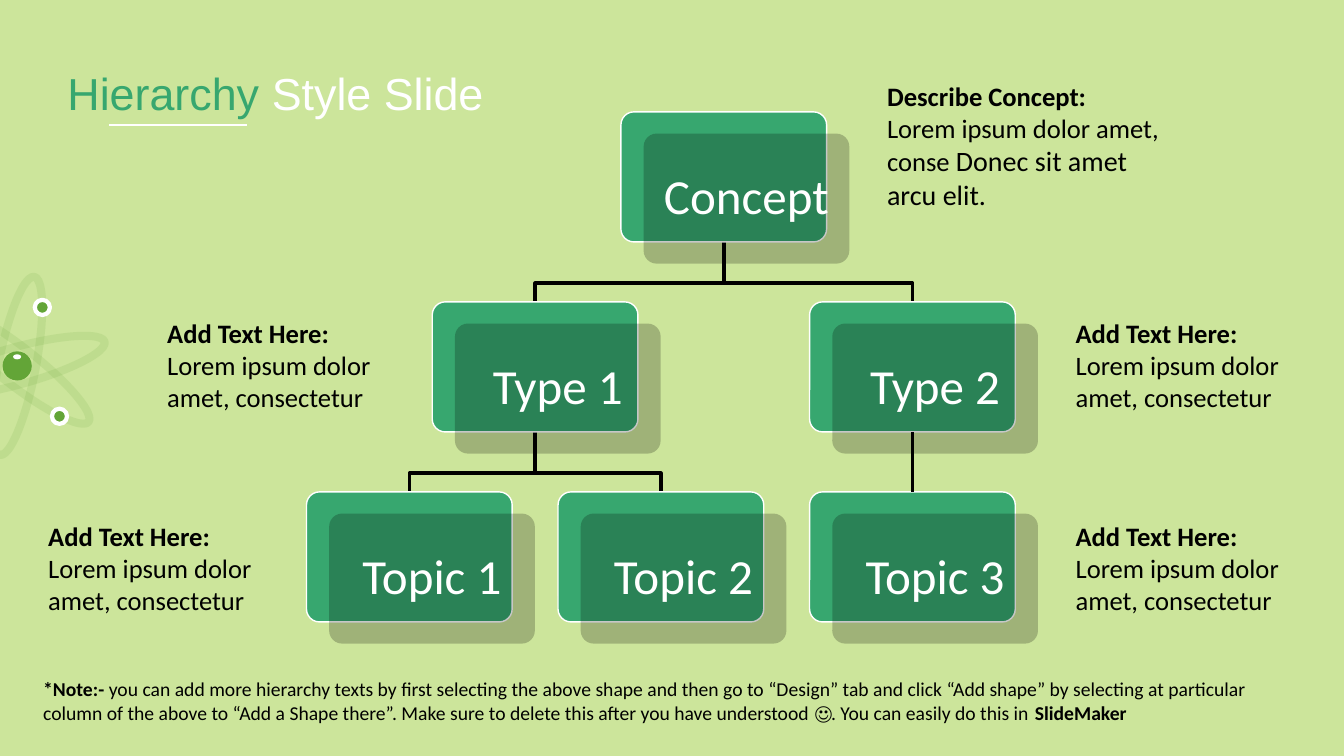
"""Build a hierarchy slide with a three-level tree, captions and an atom ornament."""
from lxml.etree import SubElement
from pptx import Presentation
from pptx.dml.color import RGBColor
from pptx.enum.shapes import MSO_CONNECTOR, MSO_SHAPE
from pptx.enum.text import MSO_ANCHOR, PP_ALIGN
from pptx.oxml.ns import qn
from pptx.util import Inches, Pt

BACKGROUND = RGBColor(0xCC, 0xE5, 0x9B)
GREEN = RGBColor(0x37, 0xA7, 0x6F)
LEAF = RGBColor(0x63, 0xA5, 0x37)
WHITE = RGBColor(0xFF, 0xFF, 0xFF)
BLACK = RGBColor(0x00, 0x00, 0x00)

NODES = {
    "Concept ": (1.25, 0),
    "Type 1": (0.5, 1),
    "Topic 1": (0, 2),
    "Topic 2": (1, 2),
    "Type 2": (2, 1),
    "Topic 3": (2, 2),
}
ELBOWS = [
    ("Concept ", "Type 2"),
    ("Type 1", "Topic 2"),
    ("Type 1", "Topic 1"),
    ("Concept ", "Type 1"),
]
STRAIGHT = ("Type 2", "Topic 3")

TREE_LEFT, TREE_TOP = 3.04, 1.11
COLUMN_STEP, ROW_STEP = 2.495, 1.885
NODE_WIDTH, NODE_HEIGHT = 2.04, 1.29
OVERLAY_SHIFT = (0.225, 0.215)
ELBOW_DROP = 0.41

TITLE = [[("Hierarchy ", 32, False, GREEN), ("Style Slide", 32, False, WHITE)]]
NOTE = [[
    ("*Note:- ", 14, True, BLACK),
    ("you can add more hierarchy texts by first selecting the above shape and then go to "
     "“Design” tab and click “Add shape” by selecting at particular column of the above to "
     "“Add a Shape there”. Make sure to delete this after you have understood ☺. "
     "You can easily do this in ", 14, False, BLACK),
    ("SlideMaker", 14, True, BLACK),
]]
CONCEPT_CAPTION = [
    [("Describe Concept:", 19, True, BLACK)],
    [("Lorem ipsum dolor amet, conse", 19, False, BLACK),
     (" Donec sit amet arcu elit.", 20, False, BLACK)],
]
CAPTION = [
    [("Add Text Here:", 19, True, BLACK)],
    [("Lorem ipsum dolor amet, consectetur", 19, False, BLACK)],
]
CAPTION_PLACES = [(1.56, 3.1), (10.57, 3.1), (10.57, 5.11), (0.38, 5.11)]

ATOM_CENTER = (0.17, 3.63)
ORBIT_ANGLES = [-15.4, -79.1, 38.1]
ELECTRONS = [(0.42, 3.05), (0.59, 4.13)]


def set_alpha(shape, percent):
    for color in shape.element.iter(qn("a:srgbClr")):
        SubElement(color, qn("a:alpha"), val=str(percent * 1000))


def add_shape(slide, kind, box, fill=None, line=None, line_width=1):
    shape = slide.shapes.add_shape(kind, *map(Inches, box))
    shape.shadow.inherit = False
    paint(shape, fill, line, line_width)
    return shape


def paint(shape, fill, line, line_width):
    if fill is None:
        shape.fill.background()
    else:
        shape.fill.solid()
        shape.fill.fore_color.rgb = fill
    if line is None:
        shape.line.fill.background()
    else:
        shape.line.color.rgb = line
        shape.line.width = Pt(line_width)


def add_ellipse(slide, center, width, height, **style):
    box = (center[0] - width / 2, center[1] - height / 2, width, height)
    return add_shape(slide, MSO_SHAPE.OVAL, box, **style)


def add_line(slide, start, end, color, width):
    line = slide.shapes.add_connector(MSO_CONNECTOR.STRAIGHT, *map(Inches, start + end))
    line.line.color.rgb = color
    line.line.width = Pt(width)
    SubElement(line.element.spPr, qn("a:effectLst"))
    return line


def add_text(slide, box, paragraphs, font_name="Calibri"):
    text_frame = slide.shapes.add_textbox(*map(Inches, box)).text_frame
    text_frame.word_wrap = True
    for index, runs in enumerate(paragraphs):
        paragraph = text_frame.add_paragraph() if index else text_frame.paragraphs[0]
        for text, size, bold, color in runs:
            run = paragraph.add_run()
            run.text = text
            run.font.name = font_name
            run.font.size = Pt(size)
            run.font.bold = bold
            run.font.color.rgb = color


def add_atom(slide):
    for angle in ORBIT_ANGLES:
        orbit = add_ellipse(slide, ATOM_CENTER, 1.8, 0.37, line=LEAF, line_width=5.75)
        orbit.rotation = angle
        set_alpha(orbit, 13)
    add_ellipse(slide, ATOM_CENTER, 0.29, 0.29, fill=LEAF)
    for center in ELECTRONS:
        add_ellipse(slide, center, 0.15, 0.15, fill=LEAF, line=WHITE, line_width=3)
    add_ellipse(slide, (0.17, 3.54), 0.08, 0.05, fill=WHITE)


def node_place(name):
    column, row = NODES[name]
    return TREE_LEFT + column * COLUMN_STEP, TREE_TOP + row * ROW_STEP


def add_elbow(slide, parent, child):
    parent_left, parent_top = node_place(parent)
    child_left, child_top = node_place(child)
    start_x, end_x = parent_left + NODE_WIDTH / 2, child_left + NODE_WIDTH / 2
    start_y = parent_top + NODE_HEIGHT
    bend_y = start_y + ELBOW_DROP
    builder = slide.shapes.build_freeform(Inches(start_x), Inches(start_y))
    points = [(start_x, bend_y), (end_x, bend_y), (end_x, child_top)]
    builder.add_line_segments([(Inches(x), Inches(y)) for x, y in points], close=False)
    elbow = builder.convert_to_shape()
    elbow.shadow.inherit = False
    paint(elbow, None, BLACK, 2.5)


def add_node(slide, name):
    left, top = node_place(name)
    size = (NODE_WIDTH, NODE_HEIGHT)
    card = add_shape(slide, MSO_SHAPE.ROUNDED_RECTANGLE, (left, top) + size, GREEN, WHITE)
    shifted = (left + OVERLAY_SHIFT[0], top + OVERLAY_SHIFT[1])
    overlay = add_shape(slide, MSO_SHAPE.ROUNDED_RECTANGLE, shifted + size, BLACK)
    set_alpha(overlay, 22)
    for shape in (card, overlay):
        shape.adjustments[0] = 0.1
    text_frame = overlay.text_frame
    text_frame.text = name
    text_frame.word_wrap = True
    text_frame.vertical_anchor = MSO_ANCHOR.MIDDLE
    text_frame.margin_left = text_frame.margin_right = Inches(0.15)
    text_frame.margin_top = text_frame.margin_bottom = Inches(0.15)
    paragraph = text_frame.paragraphs[0]
    paragraph.alignment = PP_ALIGN.CENTER
    paragraph.line_spacing = 0.9
    font = paragraph.runs[0].font
    font.name, font.size = "Calibri", Pt(35)
    font.color.rgb = WHITE
    return card


def main():
    presentation = Presentation()
    presentation.slide_width, presentation.slide_height = Inches(13.33), Inches(7.5)
    slide = presentation.slides.add_slide(presentation.slide_layouts[6])
    slide.background.fill.solid()
    slide.background.fill.fore_color.rgb = BACKGROUND

    add_atom(slide)
    for parent, child in ELBOWS:
        add_elbow(slide, parent, child)
    cards = {name: add_node(slide, name) for name in NODES}
    link = add_line(slide, (9.05, 4.29), (9.05, 4.88), BLACK, 2.5)
    link.begin_connect(cards[STRAIGHT[0]], 2)
    link.end_connect(cards[STRAIGHT[1]], 0)

    add_text(slide, (0.33, 6.67, 12.66, 0.57), NOTE)
    add_text(slide, (8.7, 0.74, 2.97, 1.41), CONCEPT_CAPTION)
    for place in CAPTION_PLACES:
        add_text(slide, place + (2.42, 1.06), CAPTION)
    add_text(slide, (0.57, 0.6, 5.41, 0.64), TITLE, "Arial")
    add_line(slide, (1.08, 1.24), (2.45, 1.24), WHITE, 1.5)
    presentation.save("out.pptx")


if __name__ == "__main__":
    main()
